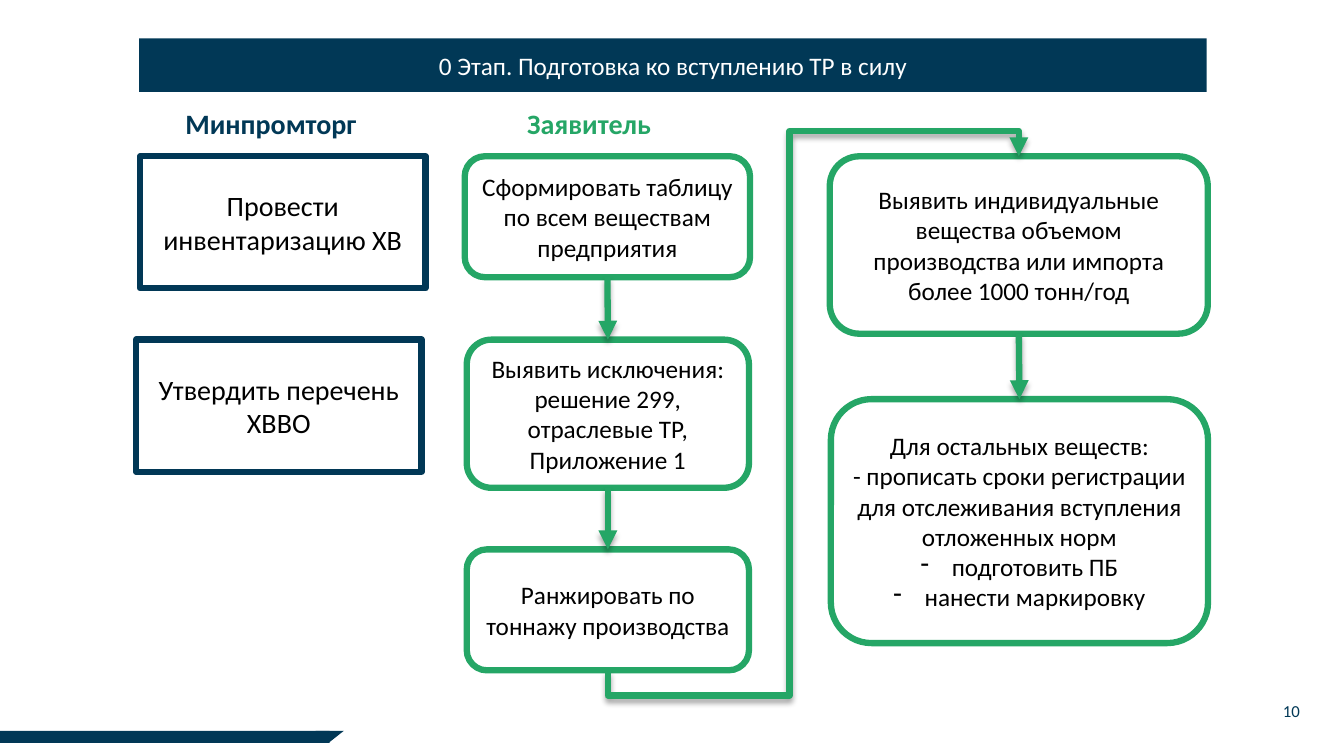
from lxml.etree import SubElement
from pptx import Presentation
from pptx.dml.color import RGBColor
from pptx.enum.shapes import MSO_CONNECTOR as LINK, MSO_SHAPE as FORM
from pptx.enum.text import MSO_ANCHOR as ANCHOR, MSO_AUTO_SIZE as FIT, PP_ALIGN as ALIGN
from pptx.oxml.ns import qn
from pptx.util import Inches, Pt

NAVY = RGBColor(0x01, 0x38, 0x56)
GREEN = RGBColor(0x25, 0xA6, 0x66)
WHITE = RGBColor(0xFF, 0xFF, 0xFF)
BLACK = RGBColor(0x00, 0x00, 0x00)
WIDTH, HEIGHT = Inches(13.33), Inches(7.5)
ROW_1, ROW_2 = 20.67, 44.93
BOTTOM, TOP = 2, 0


def area(left, top, width, height):
    """Turn percentages of the slide into lengths."""
    return (int(WIDTH * left / 100), int(HEIGHT * top / 100),
            int(WIDTH * width / 100), int(HEIGHT * height / 100))


def write(shape, text, size, color, align=ALIGN.CENTER, bold=False):
    """Fill a shape with formatted text."""
    frame = shape.text_frame
    frame.text = text
    for paragraph in frame.paragraphs:
        paragraph.alignment = align
        for run in paragraph.runs:
            run.font.name, run.font.size = "Calibri", Pt(size)
            run.font.bold, run.font.color.rgb = bold, color


def paint(shape, fill, outline=None):
    """Set fill and outline, without a shadow."""
    shape.shadow.inherit = False
    shape.fill.solid()
    shape.fill.fore_color.rgb = fill
    if outline is None:
        shape.line.fill.background()
    else:
        shape.line.color.rgb = outline
        shape.line.width = Pt(4.5)


def add_step(slide, form, place, text, size, outline):
    """Add an outlined step of the process."""
    step = slide.shapes.add_shape(form, *area(*place))
    paint(step, WHITE, outline)
    step.text_frame.word_wrap = True
    step.text_frame.vertical_anchor = ANCHOR.MIDDLE
    write(step, text, size, BLACK)
    return step


def add_label(slide, place, text, size, color, align=ALIGN.LEFT, bold=False):
    """Add a single-line label."""
    label = slide.shapes.add_textbox(*area(*place))
    write(label, text, size, color, align, bold)
    label.text_frame.word_wrap = align == ALIGN.RIGHT


def add_dash(paragraph):
    """Give a paragraph a hanging dash bullet."""
    props = paragraph._p.get_or_add_pPr()
    props.set("marL", str(Inches(0.31)))
    props.set("indent", str(-Inches(0.31)))
    SubElement(props, qn("a:buChar")).set("char", "-")


def style_arrow(arrow):
    """Give a connector its colour, arrowhead and soft shadow."""
    arrow.line.color.rgb = GREEN
    arrow.line.width = Pt(4.5)
    SubElement(arrow.line._ln, qn("a:tailEnd")).set("type", "triangle")
    effects = SubElement(arrow._element.spPr, qn("a:effectLst"))
    shadow = SubElement(effects, qn("a:outerShdw"), blurRad=str(Pt(4)),
                        dist=str(Pt(3)), dir="5400000", rotWithShape="0")
    black = SubElement(shadow, qn("a:srgbClr"), val="000000")
    SubElement(black, qn("a:alpha"), val="35000")


def add_arrow(slide, upper, lower):
    """Join two steps from bottom to top."""
    arrow = slide.shapes.add_connector(LINK.STRAIGHT, 0, 0, 0, 0)
    arrow.begin_connect(upper, BOTTOM)
    arrow.end_connect(lower, TOP)
    style_arrow(arrow)


def add_detour(slide, last, first):
    """Lead from the foot of one column up to the head of the next."""
    x1, y1 = last.left + last.width // 2, last.top + last.height
    x2, y2 = first.left + first.width // 2, first.top
    mid_x, mid_y = (x1 + x2) // 2, (y1 + y2) // 2
    half_w, half_h = (y1 - y2) // 2, (x2 - x1) // 2
    arrow = slide.shapes.add_connector(
        LINK.ELBOW, mid_x + half_w, mid_y + half_h, mid_x - half_w, mid_y - half_h)
    props = arrow._element.spPr
    props.find(qn("a:xfrm")).set("rot", "5400000")
    geometry = props.find(qn("a:prstGeom"))
    geometry.set("prst", "bentConnector5")
    bends = geometry.find(qn("a:avLst"))
    if bends is None:
        bends = SubElement(geometry, qn("a:avLst"))
    for number, share in enumerate((-4900, 44200, 104900), 1):
        SubElement(bends, qn("a:gd"), name=f"adj{number}", fmla=f"val {share}")
    style_arrow(arrow)


def add_title(slide):
    """Turn the title placeholder into the banner."""
    banner = slide.shapes.title
    banner.left, banner.top, banner.width, banner.height = area(10.35, 5.07, 79.44, 7.07)
    banner.fill.solid()
    banner.fill.fore_color.rgb = NAVY
    banner.text_frame.auto_size = FIT.NONE
    banner.text_frame.vertical_anchor = ANCHOR.MIDDLE
    write(banner, "0 Этап. Подготовка ко вступлению ТР в силу", 18, WHITE)


def add_corner(slide):
    """Add the slanted strip at the foot."""
    tip = slide.shapes.add_shape(FORM.ISOSCELES_TRIANGLE, *area(23.48, 96.67, 2.1, 1.47))
    tip.rotation = 180
    strip = slide.shapes.add_shape(FORM.RECTANGLE, *area(0, 96.67, 24.53, 1.6))
    for part in (tip, strip):
        paint(part, NAVY)


def main():
    """Build the slide and save it."""
    deck = Presentation()
    deck.slide_width, deck.slide_height = WIDTH, HEIGHT
    slide = deck.slides.add_slide(deck.slide_layouts[5])
    add_corner(slide)
    add_title(slide)
    add_label(slide, (13.05, 13.47, 15.6, 5.87), "Минпромторг", 20, NAVY, bold=True)
    add_label(slide, (38.48, 13.47, 12.08, 5.87), "Заявитель", 20, GREEN, bold=True)
    add_label(slide, (88.67, 92, 8.78, 5.33), "10", 12, NAVY, ALIGN.RIGHT)

    for left, top, text in ((10.43, ROW_1, "Провести инвентаризацию ХВ"),
                            (10.13, ROW_2, "Утвердить перечень ХВВО")):
        add_step(slide, FORM.RECTANGLE, (left, top, 21.23, 17.47), text, 20, NAVY)

    applicant_steps = (
        ((34.58, ROW_1, 21.23, 16), "Сформировать таблицу по всем веществам предприятия"),
        ((34.73, ROW_2, 21, 19.6),
         "Выявить исключения: решение 299, отраслевые ТР, Приложение 1"),
        ((34.73, 72.67, 21, 16), "Ранжировать по тоннажу производства"),
        ((61.74, ROW_1, 28.13, 23.47),
         "Выявить индивидуальные вещества объемом производства или импорта "
         "более 1000 тонн/год"),
        ((61.82, 52.8, 28.06, 32.27),
         "Для остальных веществ:\n"
         "- прописать сроки регистрации для отслеживания вступления отложенных норм\n"
         "подготовить ПБ\nнанести маркировку"),
    )
    inventory, exceptions, ranking, large_volume, remaining = [
        add_step(slide, FORM.ROUNDED_RECTANGLE, place, text, 18, GREEN)
        for place, text in applicant_steps]
    for paragraph in remaining.text_frame.paragraphs[2:]:
        add_dash(paragraph)

    for upper, lower in ((inventory, exceptions), (exceptions, ranking),
                         (large_volume, remaining)):
        add_arrow(slide, upper, lower)
    add_detour(slide, ranking, large_volume)
    deck.save("out.pptx")


if __name__ == "__main__":
    main()
